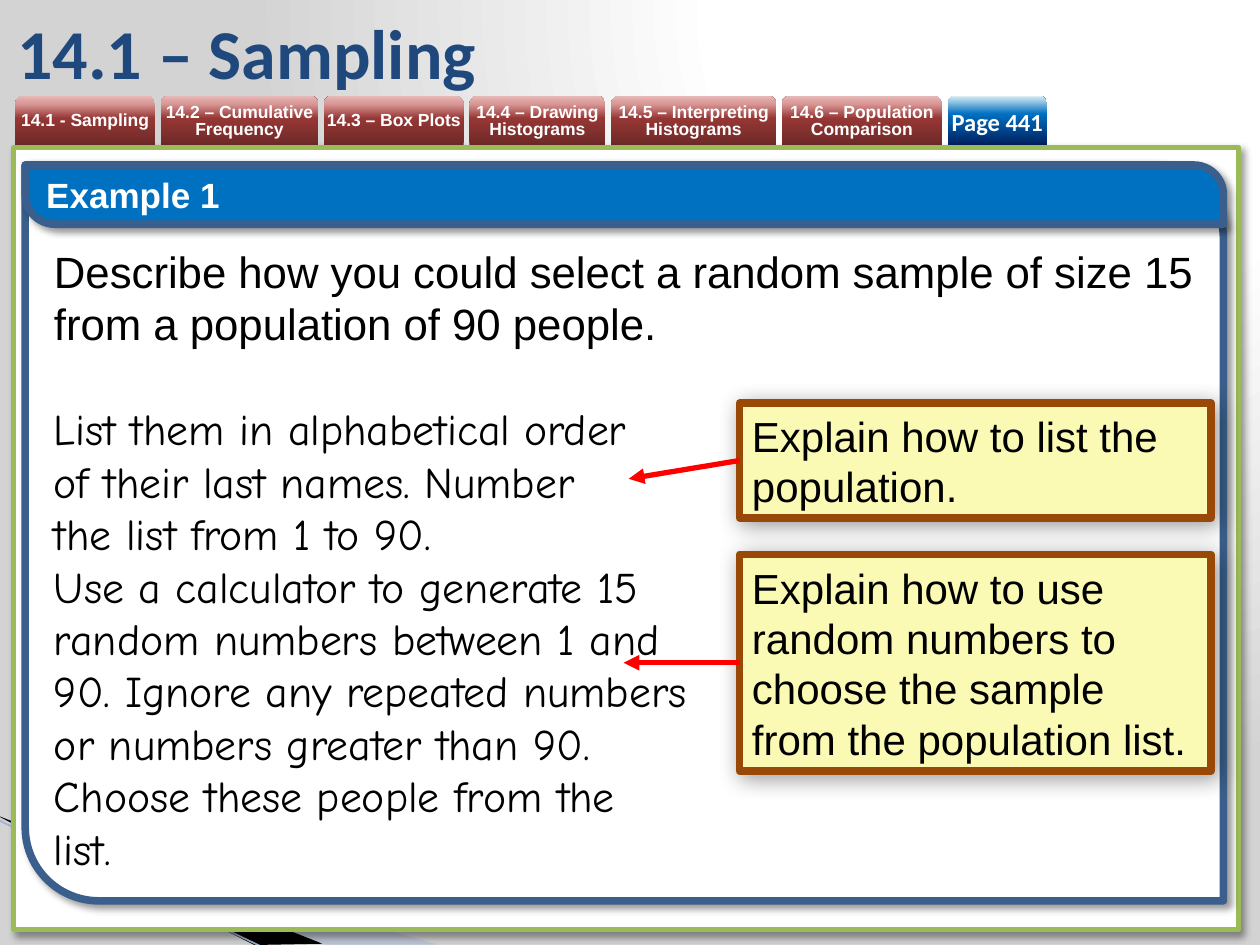
from lxml.etree import SubElement
from pptx import Presentation
from pptx.dml.color import RGBColor
from pptx.enum.shapes import MSO_CONNECTOR, MSO_SHAPE
from pptx.enum.text import MSO_ANCHOR, PP_ALIGN
from pptx.oxml.ns import qn
from pptx.util import Inches, Pt

WHITE = RGBColor(0xFF, 0xFF, 0xFF)
BLACK = RGBColor(0, 0, 0)
NAVY = RGBColor(0x1F, 0x49, 0x7D)
BLUE = RGBColor(0x00, 0x70, 0xC0)
FRAME_BLUE = RGBColor(0x3A, 0x5F, 0x8C)
GREEN = RGBColor(0x9B, 0xBB, 0x59)
CREAM = RGBColor(0xFA, 0xFA, 0xB4)
BROWN = RGBColor(0x98, 0x48, 0x07)
RED = RGBColor(0xFF, 0, 0)
PALE_BLUE = RGBColor(0xA7, 0xB9, 0xDB)
STREAK_BLUE = RGBColor(0x9E, 0xB3, 0xD6)

# Gradient stops: position in percent, colour
BACKDROP = [(0, WHITE), (40, WHITE), (100, RGBColor(0xD3, 0xD3, 0xD3))]
TAB_RED = [(0, RGBColor(0x6F, 0x29, 0x27)), (54, RGBColor(0x95, 0x37, 0x35)),
           (83, RGBColor(0xD9, 0x96, 0x94)), (100, RGBColor(0xE6, 0xB9, 0xB8))]
TAB_BLUE = [(0, RGBColor(0, 0x20, 0x60)), (63, BLUE), (100, RGBColor(0xDB, 0xEE, 0xF4))]

# Content
TITLE = "14.1 – Sampling"
TABS = [("14.1 - Sampling", 1.11), ("14.2 – Cumulative Frequency", 1.25),
        ("14.3 – Box Plots", 1.11), ("14.4 – Drawing Histograms", 1.08),
        ("14.5 – Interpreting Histograms", 1.31), ("14.6 – Population Comparison", 1.27),
        ("Page 441", 0.79)]
TABS_LEFT, TABS_RIGHT = 0.12, 8.31
HEADING = "Example 1"
QUESTION = ["Describe how you could select a random sample of size 15 "
            "from a population of 90 people."]
ANSWERS = [
    ["List them in alphabetical order", "of their last names. Number",
     "the list from 1 to 90."],
    ["Use a calculator to generate 15", "random numbers between 1 and",
     "90. Ignore any repeated numbers", "or numbers greater than 90.",
     "Choose these people from the", "list."],
]
# Callouts: text, top, height, arrow tip
CALLOUTS = [
    ("Explain how to list the population.", 3.2, 0.91, (4.99, 3.8)),
    ("Explain how to use random numbers to choose the sample from the population list.",
     4.4, 1.72, (4.95, 5.26)),
]
CALLOUT_LEFT, CALLOUT_WIDTH = 5.87, 3.74
# Corner wedges: points, fill, opacity in percent
WEDGES = [
    ([(-0.01, 6.5), (3.49, 7.5), (2.59, 7.5), (-0.01, 6.49)], PALE_BLUE, 40),
    ([(0, 6.48), (2.56, 7.49), (2.02, 7.5), (0.01, 6.49)], BLACK, 100),
]


def add_color(parent, color, opacity=100):
    node = SubElement(parent, qn("a:srgbClr"), val=str(color))
    if opacity < 100:
        SubElement(node, qn("a:alpha"), val=str(opacity * 1000))


def set_gradient(fill, element, stops):
    """Replace the default gradient with the given stops; return its element."""
    fill.gradient()
    gradient = element.find(".//" + qn("a:gradFill"))
    for child in list(gradient):
        gradient.remove(child)
    stop_list = SubElement(gradient, qn("a:gsLst"))
    for position, color in stops:
        add_color(SubElement(stop_list, qn("a:gs"), pos=str(position * 1000)), color)
    return gradient


def style(shape, fill=None, line=None, weight=0, blur=None):
    if fill is not None:
        shape.fill.solid()
        shape.fill.fore_color.rgb = fill
    if line is None:
        shape.line.fill.background()
    else:
        shape.line.color.rgb = line
        shape.line.width = Pt(weight)
    shape.shadow.inherit = False
    if blur:
        effects = shape._element.spPr.find(qn("a:effectLst"))
        shadow = SubElement(effects, qn("a:outerShdw"), blurRad=str(Pt(blur)),
                            dist=str(Pt(3)), dir=str(45 * 60000), algn="tl",
                            rotWithShape="0")
        add_color(shadow, BLACK, 40)


def add_shape(page, kind, left, top, width, height, **look):
    shape = page.shapes.add_shape(kind, Inches(left), Inches(top),
                                  Inches(width), Inches(height))
    style(shape, **look)
    return shape


def write(box, paragraphs, size, color, font="Arial", bold=False, align=PP_ALIGN.LEFT,
          spacing=None, anchor=MSO_ANCHOR.MIDDLE, inset=None):
    """Fill a box with paragraphs, each a (lines, font, space after) tuple or a string."""
    frame = box.text_frame
    frame.word_wrap = True
    frame.vertical_anchor = anchor
    if inset is not None:
        frame.margin_left = frame.margin_right = inset
        frame.margin_top = frame.margin_bottom = inset
    for index, item in enumerate(paragraphs):
        lines, face, after = ([item], font, 0) if isinstance(item, str) else item
        para = frame.add_paragraph() if index else frame.paragraphs[0]
        para.alignment = align
        para.space_after = Pt(after)
        if spacing:
            para.line_spacing = Pt(spacing)
        for number, line in enumerate(lines):
            if number:
                para.add_line_break()
            span = para.add_run()
            span.text = line
            span.font.name, span.font.size, span.font.bold = face, Pt(size), bold
            span.font.color.rgb = color


def add_line(page, start, end, color, weight):
    line = page.shapes.add_connector(MSO_CONNECTOR.STRAIGHT, *map(Inches, start + end))
    line.line.color.rgb = color
    line.line.width = Pt(weight)
    SubElement(line._element.spPr, qn("a:effectLst"))
    return line


def main():
    deck = Presentation()
    deck.slide_width, deck.slide_height = Inches(10), Inches(7.5)
    page = deck.slides.add_slide(deck.slide_layouts[6])

    # Background and corner decoration
    gradient = set_gradient(page.background.fill, page._element, BACKDROP)
    circle = SubElement(gradient, qn("a:path"), {"path": "circle"})
    SubElement(circle, qn("a:fillToRect"), l="65000", t="0", r="0", b="98000")
    for points, color, opacity in WEDGES:
        corners = [(Inches(x), Inches(y)) for x, y in points]
        builder = page.shapes.build_freeform(*corners[0])
        builder.add_line_segments(corners[1:], close=True)
        wedge = builder.convert_to_shape()
        style(wedge, fill=color)
        if opacity < 100:
            tint = wedge._element.spPr.find(".//" + qn("a:srgbClr"))
            SubElement(tint, qn("a:alpha"), val=str(opacity * 1000))
    add_line(page, (-0.01, 6.51), (2.09, 7.52), STREAK_BLUE, 0.95)

    # Navigation tabs, evenly spaced; the last one is the page number
    gap = (TABS_RIGHT - TABS_LEFT - sum(width for _, width in TABS)) / (len(TABS) - 1)
    left = TABS_LEFT
    for label, width in TABS:
        is_page = label.startswith("Page")
        tab = add_shape(page, MSO_SHAPE.ROUND_2_SAME_RECTANGLE, left, 0.76, width, 0.39)
        gradient = set_gradient(tab.fill, tab._element, TAB_BLUE if is_page else TAB_RED)
        SubElement(gradient, qn("a:lin"), ang=str(270 * 60000), scaled="0")
        write(tab, [label], 14 if is_page else 10, WHITE, bold=True,
              font="Calibri" if is_page else "Arial", align=PP_ALIGN.CENTER,
              spacing=None if is_page else 10, inset=0)
        left += width + gap

    # Title and main panel
    add_shape(page, MSO_SHAPE.RECTANGLE, 0.11, 1.17, 9.72, 6.21,
              fill=WHITE, line=GREEN, weight=3, blur=4)
    title = page.shapes.add_textbox(Inches(0.04), Inches(0.05), Inches(8.07), Inches(0.71))
    write(title, [TITLE], 40, NAVY, font="Calibri", bold=True)

    # Example frame, heading bar and worked text
    for top, height, fill, corner in [(1.31, 5.84, WHITE, 0.1), (1.31, 0.47, BLUE, 0.5)]:
        bar = add_shape(page, MSO_SHAPE.ROUND_2_DIAG_RECTANGLE, 0.2, top, 9.51, height,
                        fill=fill, line=FRAME_BLUE, weight=4.33, blur=4)
        bar.adjustments[0], bar.adjustments[1] = 0, corner
    write(bar, [HEADING], 20, WHITE, bold=True)
    body = page.shapes.add_textbox(Inches(0.33), Inches(1.89), Inches(9.31), Inches(5.15))
    write(body, [(QUESTION, "Arial", 30)] + [(lines, "Comic Neue", 0) for lines in ANSWERS],
          25, BLACK, spacing=30, anchor=MSO_ANCHOR.TOP)

    # Callouts with arrows
    for text, top, height, tip in CALLOUTS:
        callout = add_shape(page, MSO_SHAPE.RECTANGLE, CALLOUT_LEFT, top, CALLOUT_WIDTH,
                            height, fill=CREAM, line=BROWN, weight=4.33, blur=13)
        write(callout, [text], 24, BLACK, spacing=28.8)
        arrow = add_line(page, (CALLOUT_LEFT, top + height / 2), tip, RED, 3)
        arrow.begin_connect(callout, 1)
        SubElement(arrow._element.spPr.find(qn("a:ln")), qn("a:tailEnd"), type="triangle")

    deck.save("out.pptx")


if __name__ == "__main__":
    main()
